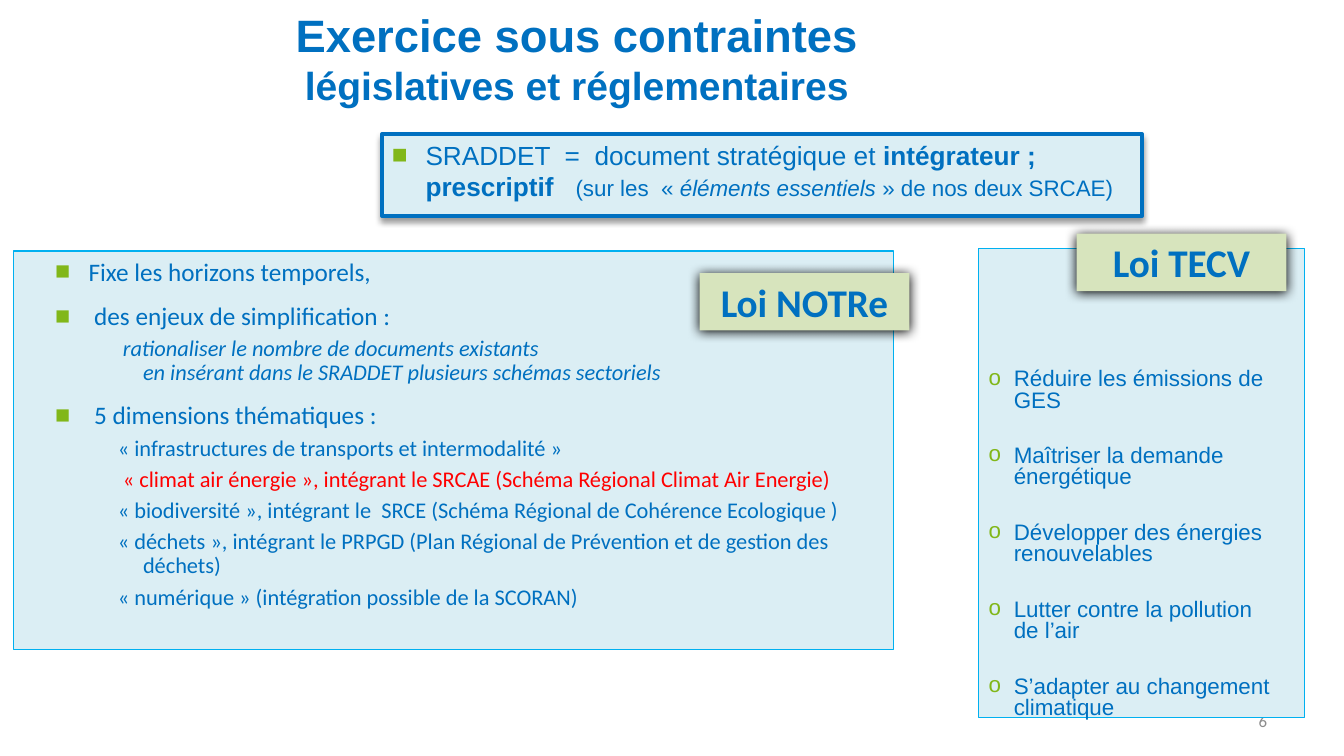
from lxml.etree import SubElement as Sub
from pptx import Presentation as Deck
from pptx.dml.color import RGBColor as RGB
from pptx.enum.shapes import MSO_SHAPE as Kind
from pptx.enum.text import MSO_ANCHOR as Anchor, PP_ALIGN as Align
from pptx.oxml.ns import qn
from pptx.util import Pt

HUES = {
    "blue": "0070C0", "edge": "00B0F0", "pale": "DBEEF4", "leaf": "D7E4BD",
    "dot": "81B719", "red": "FF0000", "gray": "8C8C8C", "black": "000000",
}
MAIN = {"space_before": Pt(10)}
DEEP = {"space_before": Pt(5), "line_spacing": 0.9, "level": 2}
GOAL = {"space_before": Pt(24.2), "line_spacing": 0.8}
MID = {"alignment": Align.CENTER}

THEMES = [
    [("« infrastructures de transports et intermodalité »", {})],
    [(" ", {}), ("« climat air énergie », intégrant le SRCAE (Schéma Régional Climat Air Energie)", {"hue": "red"})],
    [("« biodiversité », intégrant le  SRCE (Schéma Régional de Cohérence Ecologique )", {})],
    [("« déchets », intégrant le PRPGD (Plan Régional de Prévention et de gestion des déchets)", {})],
    [("« numérique » (intégration possible de la SCORAN)", {})],
]
GOALS = [
    "Réduire les émissions de GES",
    "Maîtriser la demande énergétique",
    "Développer des énergies renouvelables",
    "Lutter contre la pollution \nde l’air",
    "S’adapter au changement climatique",
]


def tint(name):
    return RGB.from_string(HUES[name])


def apply(item, form):
    for key, value in form.items():
        setattr(item, key, value)


def set_frame(shape, anchor=Anchor.TOP, top=3.6):
    frame = shape.text_frame
    apply(frame, {
        "word_wrap": True, "vertical_anchor": anchor,
        "margin_left": Pt(7.2), "margin_right": Pt(7.2),
        "margin_top": Pt(top), "margin_bottom": Pt(3.6),
    })
    return frame


def add_text(slide, area, anchor):
    return set_frame(slide.shapes.add_textbox(*map(Pt, area)), anchor)


def add_box(slide, area, fill, edge=None, width=0.75, shade=None, top=3.6):
    box = slide.shapes.add_shape(Kind.RECTANGLE, *map(Pt, area))
    box.fill.solid()
    box.fill.fore_color.rgb = tint(fill)
    if edge:
        box.line.color.rgb = tint(edge)
        box.line.width = Pt(width)
    else:
        box.line.fill.background()
    box.shadow.inherit = False
    if shade:
        add_shade(box, *shade)
    return set_frame(box, top=top)


def add_shade(box, alpha, blur, dist):
    effects = box._element.spPr.find(qn("a:effectLst"))
    outer = Sub(effects, qn("a:outerShdw"), blurRad=str(Pt(blur)),
                dist=str(Pt(dist)), dir="5400000", rotWithShape="0")
    color = Sub(outer, qn("a:srgbClr"), val=HUES["black"])
    Sub(color, qn("a:alpha"), val=str(alpha * 1000))


def add_para(frame, runs, base, form, dent=None, mark=None):
    para = frame.paragraphs[0]
    if para.runs:
        para = frame.add_paragraph()
    apply(para, {"alignment": Align.LEFT, **form})
    props = para._p.get_or_add_pPr()
    if dent:
        props.set("marL", str(Pt(dent[0])))
        props.set("indent", str(Pt(dent[1])))
    if mark:
        Sub(Sub(props, qn("a:buClr")), qn("a:srgbClr"), val=HUES["dot"])
        Sub(props, qn("a:buFont"), typeface="Arial")
        Sub(props, qn("a:buChar"), char=mark)
    for text, extra in runs:
        look = {"hue": "blue", **base, **extra}
        hue = look.pop("hue")
        for order, part in enumerate(text.split("\n")):
            if order:
                para.add_line_break()
            run = para.add_run()
            run.text = part
            apply(run.font, look)
            run.font.color.rgb = tint(hue)


def add_tag(slide, left, top, text):
    frame = add_box(slide, (left, top, 149.8, 41), "leaf", shade=(100, 8.5, 1))
    look = {"name": "Calibri", "size": Pt(28), "bold": True}
    add_para(frame, [(text, {})], look, MID)


def add_head(slide):
    frame = add_text(slide, (160.6, 0, 502.6, 82.1), Anchor.MIDDLE)
    runs = [("Exercice sous contraintes\n", {"size": Pt(32.4)}),
            ("législatives et réglementaires", {"size": Pt(27.9)})]
    add_para(frame, runs, {"name": "Arial", "bold": True}, MID)


def add_lead(slide):
    frame = add_box(slide, (272.9, 95.8, 542.9, 58.3), "pale", "blue", 3, (40, 4, 3))
    small = {"size": Pt(16)}
    runs = [
        ("SRADDET  =  document stratégique et ", {}),
        ("intégrateur ;\nprescriptif   ", {"bold": True}),
        ("(sur les  « ", small),
        ("éléments essentiels", {**small, "italic": True}),
        (" » de nos deux SRCAE)", small),
    ]
    add_para(frame, runs, {"name": "Arial", "size": Pt(18.7)}, MAIN, (24, -24), "■")


def add_goals(slide):
    frame = add_box(slide, (699.1, 177.8, 232.6, 334.8), "pale", "edge", top=86)
    look = {"name": "Arial", "size": Pt(16)}
    for goal in GOALS:
        add_para(frame, [(goal, {})], look, GOAL, (18, -18), "o")


def add_aims(slide):
    frame = add_box(slide, (9.4, 179.3, 628.6, 284.4), "pale", "edge")
    large = {"name": "Calibri", "size": Pt(18)}
    small = {"name": "Calibri", "size": Pt(16)}

    def add_main(text):
        add_para(frame, [(text, {})], large, MAIN, (46.8, -23.8), "■")

    def add_deep(runs):
        add_para(frame, runs, small, DEEP, (85.7, -18))

    add_main("Fixe les horizons temporels,")
    add_main(" des enjeux de simplification :")
    add_deep([(" rationaliser le nombre de documents existants \n"
               "en insérant dans le SRADDET plusieurs schémas sectoriels", {"italic": True})])
    add_main(" 5 dimensions thématiques :")
    for theme in THEMES:
        add_deep(theme)


def main():
    deck = Deck()
    apply(deck, {"slide_width": Pt(960), "slide_height": Pt(540)})
    slide = deck.slides.add_slide(deck.slide_layouts[6])
    add_head(slide)
    add_lead(slide)
    page = add_text(slide, (688.3, 500.4, 223.9, 28.8), Anchor.MIDDLE)
    look = {"name": "Calibri", "size": Pt(12), "hue": "gray"}
    add_para(page, [("6", {})], look, {"alignment": Align.RIGHT})
    add_goals(slide)
    add_aims(slide)
    add_tag(slide, 499.7, 195.1, "Loi NOTRe")
    add_tag(slide, 769, 167, "Loi TECV")
    deck.save("out.pptx")


if __name__ == "__main__":
    main()
